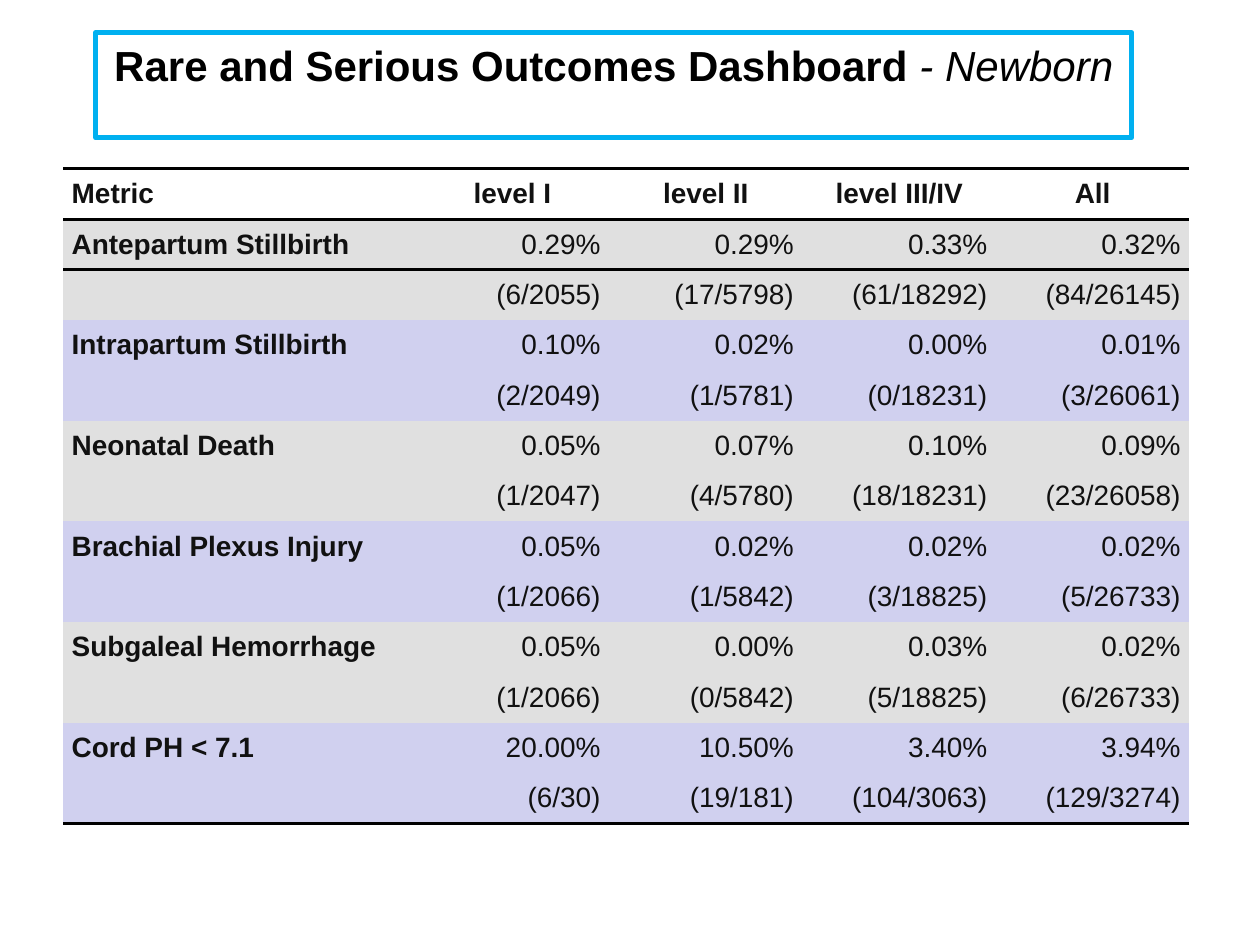
from dataclasses import dataclass

from lxml import etree
from pptx import Presentation
from pptx.dml.color import RGBColor
from pptx.enum import text
from pptx.oxml import ns
from pptx.util import Pt


@dataclass(frozen=True)
class Theme:
    font: str = "Arial"
    title_size: float = 24
    table_size: float = 16
    title_ink: str = "000000"
    table_ink: str = "111111"
    frame: str = "00B0F0"
    rule: str = "000000"
    bands: tuple = ("E0E0E0", "D0D0EF")


THEME = Theme()
NO_STYLE_NO_GRID = "{2D5ABB26-0587-4C30-8999-92F81FD0307C}"
ALIGN = text.PP_ALIGN

HEADINGS = ("Metric", "level I", "level II", "level III/IV", "All")
OUTCOMES = (
    ("Antepartum Stillbirth", ("0.29%", "0.29%", "0.33%", "0.32%"),
     ("(6/2055)", "(17/5798)", "(61/18292)", "(84/26145)")),
    ("Intrapartum Stillbirth", ("0.10%", "0.02%", "0.00%", "0.01%"),
     ("(2/2049)", "(1/5781)", "(0/18231)", "(3/26061)")),
    ("Neonatal Death", ("0.05%", "0.07%", "0.10%", "0.09%"),
     ("(1/2047)", "(4/5780)", "(18/18231)", "(23/26058)")),
    ("Brachial Plexus Injury", ("0.05%", "0.02%", "0.02%", "0.02%"),
     ("(1/2066)", "(1/5842)", "(3/18825)", "(5/26733)")),
    ("Subgaleal Hemorrhage", ("0.05%", "0.00%", "0.03%", "0.02%"),
     ("(1/2066)", "(0/5842)", "(5/18825)", "(6/26733)")),
    ("Cord PH < 7.1", ("20.00%", "10.50%", "3.40%", "3.94%"),
     ("(6/30)", "(19/181)", "(104/3063)", "(129/3274)")),
)


def add_run(paragraph, wording, size, ink, bold=False, italic=False):
    run = paragraph.add_run()
    run.text = wording
    font = run.font
    font.name, font.size = THEME.font, Pt(size)
    font.bold, font.italic = bold, italic
    font.color.rgb = RGBColor.from_string(ink)


def place_title(title, left, top, width, height):
    title.left, title.top = Pt(left), Pt(top)
    title.width, title.height = Pt(width), Pt(height)
    title.fill.background()
    title.line.color.rgb = RGBColor.from_string(THEME.frame)
    title.line.width = Pt(3)
    etree.SubElement(title.line._get_or_add_ln(), ns.qn("a:round"))

    frame = title.text_frame
    frame.word_wrap = True
    frame.auto_size = text.MSO_AUTO_SIZE.SHAPE_TO_FIT_TEXT
    frame.vertical_anchor = text.MSO_ANCHOR.TOP
    frame.margin_left = frame.margin_right = Pt(7.2)
    frame.margin_top = frame.margin_bottom = Pt(3.6)
    heading = frame.paragraphs[0]
    heading.alignment = ALIGN.CENTER
    heading.line_spacing = 1.0
    heading.space_before = Pt(0)
    add_run(heading, "Rare and Serious Outcomes Dashboard ",
            THEME.title_size, THEME.title_ink, bold=True)
    add_run(heading, "- Newborn", THEME.title_size, THEME.title_ink, italic=True)


def rule_cell(cell, edge):
    """Draw one horizontal border; edge is lnT or lnB. Call before filling the cell."""
    line = etree.SubElement(cell._tc.get_or_add_tcPr(), ns.qn(f"a:{edge}"), w=str(Pt(2)))
    fill = etree.SubElement(line, ns.qn("a:solidFill"))
    etree.SubElement(fill, ns.qn("a:srgbClr"), val=THEME.rule)


def write_cell(cell, wording, align, bold):
    cell.vertical_anchor = text.MSO_ANCHOR.MIDDLE
    cell.margin_left = cell.margin_right = cell.margin_top = cell.margin_bottom = 0
    if not wording:
        return
    entry = cell.text_frame.paragraphs[0]
    entry.alignment = align
    entry.space_before = entry.space_after = Pt(2)
    indents = entry._p.get_or_add_pPr()
    for side in ("marL", "marR"):
        indents.set(side, str(Pt(5)))
    add_run(entry, wording, THEME.table_size, THEME.table_ink, bold)


def place_outcomes(slide, left, top, width, height, metric_width):
    rows = [HEADINGS]
    for metric, rates, counts in OUTCOMES:
        rows += [(metric, *rates), ("", *counts)]
    table = slide.shapes.add_table(len(rows), len(HEADINGS), Pt(left), Pt(top),
                                   Pt(width), Pt(height)).table
    table.first_row = table.horz_banding = False
    table._tbl.tblPr.find(ns.qn("a:tableStyleId")).text = NO_STYLE_NO_GRID

    level_width = (width - metric_width) / (len(HEADINGS) - 1)
    for c, column in enumerate(table.columns):
        column.width = Pt(level_width if c else metric_width)
    for r, row in enumerate(rows):
        table.rows[r].height = Pt(height / len(rows))
        for c, wording in enumerate(row):
            cell = table.cell(r, c)
            value_align = ALIGN.RIGHT if r else ALIGN.CENTER
            write_cell(cell, wording, value_align if c else ALIGN.LEFT,
                       bold=r == 0 or c == 0)
            if r <= 1:
                rule_cell(cell, "lnT")
            if r in (0, len(rows) - 1):
                rule_cell(cell, "lnB")
            if r == 0:
                cell.fill.background()
            else:
                cell.fill.solid()
                band = THEME.bands[(r - 1) // 2 % len(THEME.bands)]
                cell.fill.fore_color.rgb = RGBColor.from_string(band)


def main():
    deck = Presentation()
    deck.slide_width, deck.slide_height = Pt(720), Pt(540)
    slide = deck.slides.add_slide(deck.slide_layouts[5])
    place_title(slide.shapes.title, 54.7, 18.7, 592, 36.4)
    place_outcomes(slide, 36, 96.5, 643.6, 374.4, metric_width=201.6)
    deck.save("out.pptx")


if __name__ == "__main__":
    main()
